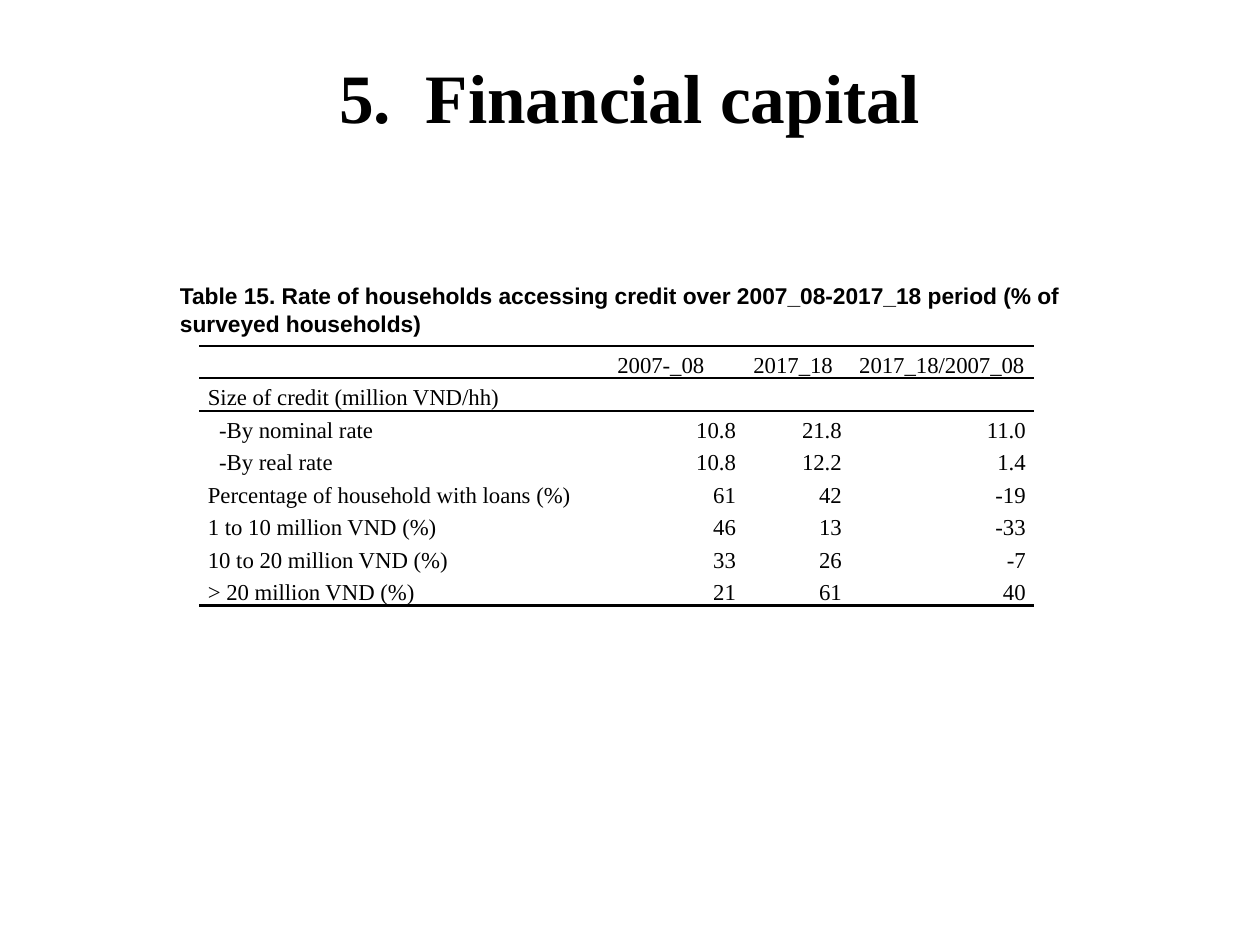
from lxml.etree import SubElement
from pptx import Presentation
from pptx.dml.color import RGBColor
from pptx.enum.text import MSO_ANCHOR, PP_ALIGN
from pptx.oxml.ns import qn
from pptx.util import Inches, Pt

COLOURS = {"ink": "000000", "paper": "FFFFFF"}
SERIF, SANS = "Times New Roman", "Arial"
WIDTH, HEIGHT = 10, 7.5
PLAIN_TABLE_STYLE = "{2D5ABB26-0587-4C30-8999-92F81FD0307C}"

HEADER = ["", "2007-_08", "2017_18", "2017_18/2007_08"]
CREDIT_ROWS = [
    ["Size of credit (million VND/hh)", "", "", ""],
    ["-By nominal rate", "10.8", "21.8", "11.0"],
    ["-By real rate", "10.8", "12.2", "1.4"],
    ["Percentage of household with loans (%)", "61", "42", "-19"],
    ["1 to 10 million VND (%)", "46", "13", "-33"],
    ["10 to 20 million VND (%)", "33", "26", "-7"],
    ["> 20 million VND (%)", "21", "61", "40"],
]
COLUMN_WIDTHS = [3.25, 1.08, 0.84, 1.46]
TABLE_HEIGHT = 2.06


def across(percent):
    return Inches(percent * WIDTH / 100)


def down(percent):
    return Inches(percent * HEIGHT / 100)


class SlideBuilder:
    """Holds the text style and the slide; places are percentages of the slide."""

    body_size = 13
    rule_width = 1.5

    def __init__(self, presentation):
        self.slide = presentation.slides.add_slide(presentation.slide_layouts[6])
        fill = self.slide.background.fill
        fill.solid()
        fill.fore_color.rgb = RGBColor.from_string(COLOURS["paper"])

    def style(self, paragraph, size, name, bold=False):
        for run in paragraph.runs:
            run.font.size = Pt(size)
            run.font.name = name
            run.font.bold = bold
            run.font.color.rgb = RGBColor.from_string(COLOURS["ink"])

    def text(self, text, left, top, width, height, size, name,
             align=PP_ALIGN.LEFT, anchor=MSO_ANCHOR.TOP, margins=(0.05, 0)):
        box = self.slide.shapes.add_textbox(
            across(left), down(top), across(width), down(height))
        frame = box.text_frame
        frame.word_wrap = True
        frame.vertical_anchor = anchor
        frame.margin_top, frame.margin_bottom = map(Inches, margins)
        frame.text = text
        paragraph = frame.paragraphs[0]
        paragraph.alignment = align
        self.style(paragraph, size, name, bold=True)

    def table(self, rows, left, top):
        table = self.slide.shapes.add_table(
            len(rows), len(COLUMN_WIDTHS), across(left), down(top),
            Inches(sum(COLUMN_WIDTHS)), Inches(TABLE_HEIGHT)).table
        table.first_row = table.horz_banding = False
        table._tbl.tblPr.find(qn("a:tableStyleId")).text = PLAIN_TABLE_STYLE
        for column, width in zip(table.columns, COLUMN_WIDTHS):
            column.width = Inches(width)
        last = len(rows) - 1
        for row_index, values in enumerate(rows):
            table.rows[row_index].height = Inches(TABLE_HEIGHT / len(rows))
            edges = {0: ("lnT", "lnB"), 1: ("lnT",), last: ("lnB",)}.get(row_index, ())
            for column_index, value in enumerate(values):
                cell = table.cell(row_index, column_index)
                is_number = row_index > 0 and column_index > 0
                self.cell(cell, value, PP_ALIGN.RIGHT if is_number else PP_ALIGN.LEFT)
                self.rules(cell, edges)

    def cell(self, cell, value, align):
        cell.vertical_anchor = MSO_ANCHOR.BOTTOM
        cell.margin_left = cell.margin_right = Inches(0.07)
        cell.margin_top = cell.margin_bottom = 0
        cell.text_frame.text = value
        paragraph = cell.text_frame.paragraphs[0]
        paragraph.alignment = align
        self.style(paragraph, self.body_size, SERIF)
        if value.startswith("-By"):
            paragraph._p.get_or_add_pPr().set("marL", str(Inches(0.09)))
        if not value:
            end = SubElement(paragraph._p, qn("a:endParaRPr"))
            end.set("sz", str(self.body_size * 100))

    def rules(self, cell, edges):
        """Draw the named cell edges, which must precede the fill in the XML."""
        properties = cell._tc.get_or_add_tcPr()
        for edge in edges:
            line = SubElement(properties, qn(f"a:{edge}"), w=str(Pt(self.rule_width)))
            fill = SubElement(line, qn("a:solidFill"))
            SubElement(fill, qn("a:srgbClr"), val=COLOURS["ink"])
        cell.fill.background()


def main():
    presentation = Presentation()
    presentation.slide_width, presentation.slide_height = Inches(WIDTH), Inches(HEIGHT)
    builder = SlideBuilder(presentation)
    builder.text("5.  Financial capital", 5, 4, 90, 16.7, 39.6, SERIF,
                 PP_ALIGN.CENTER, MSO_ANCHOR.MIDDLE, (0.05, 0.38))
    builder.table([HEADER] + CREDIT_ROWS, 15.8, 36.6)
    builder.text("Table 15. Rate of households accessing credit over 2007_08-2017_18 "
                 "period (% of surveyed households)",
                 13.3, 29.2, 75.8, 10.5, builder.body_size, SANS)
    presentation.save("out.pptx")


if __name__ == "__main__":
    main()
